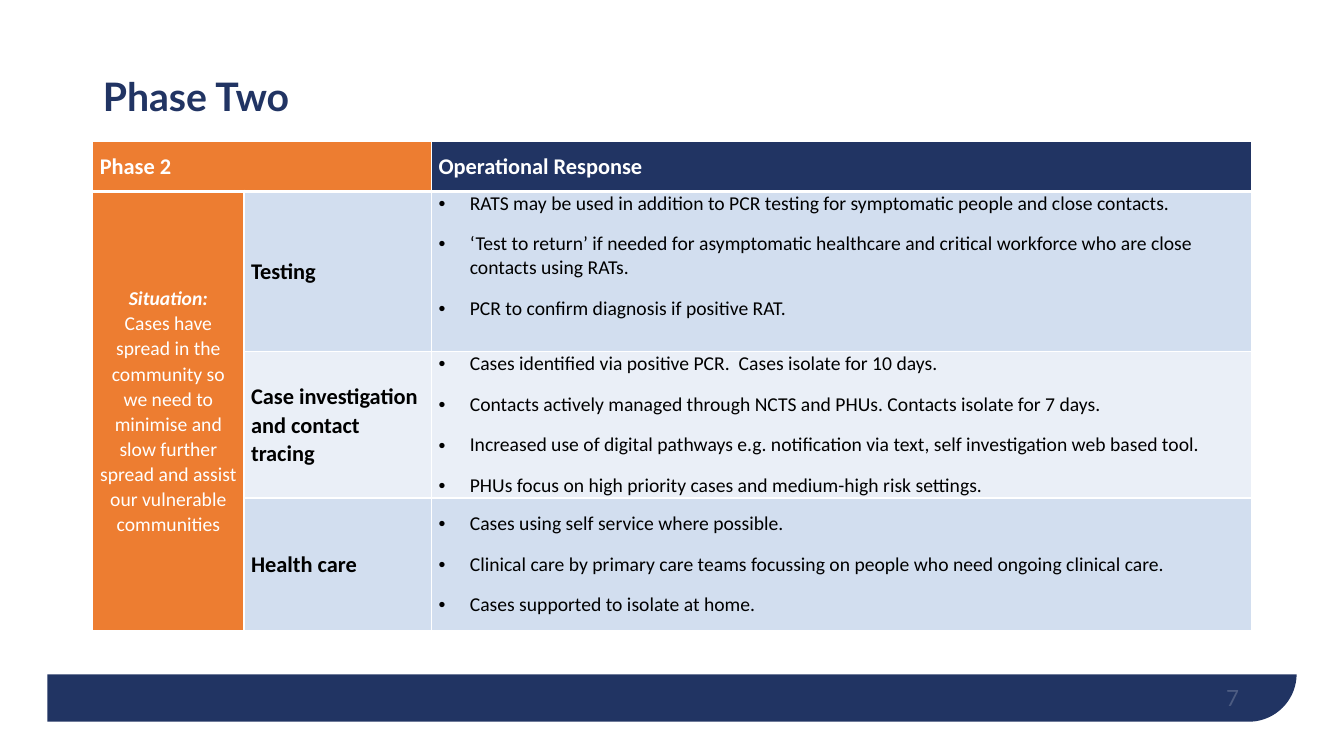
from pptx import Presentation
from pptx import util as u
from pptx.dml.color import RGBColor
from pptx.enum import shapes, text
from pptx.oxml import ns
from lxml import etree

NAVY, ORANGE, WHITE, BLACK = "213463", "ED7D31", "FFFFFF", "000000"
BANDS = ["D2DEEF", "EAEFF7"]
COLUMNS = [1.5, 1.86, 8.13]
ROWS = [0.5, 1.59, 1.45, 1.32]
MIDDLE, TOP = text.MSO_ANCHOR.MIDDLE, text.MSO_ANCHOR.TOP
SITUATION = ("Cases have spread in the community so we need to minimise and slow "
             "further spread and assist our vulnerable communities")
RESPONSES = [
    ("Testing", TOP, [
        "RATS may be used in addition to PCR testing for symptomatic people and close contacts.",
        "‘Test to return’ if needed for asymptomatic healthcare and critical workforce "
        "who are close contacts using RATs.",
        "PCR to confirm diagnosis if positive RAT."]),
    ("Case investigation and contact tracing", MIDDLE, [
        "Cases identified via positive PCR.  Cases isolate for 10 days.",
        "Contacts actively managed through NCTS and PHUs. Contacts isolate for 7 days.",
        "Increased use of digital pathways e.g. notification via text, "
        "self investigation web based tool.",
        "PHUs focus on high priority cases and medium-high risk settings."]),
    ("Health care", MIDDLE, [
        "Cases using self service where possible.",
        "Clinical care by primary care teams focussing on people who need ongoing clinical care.",
        "Cases supported to isolate at home."]),
]


def paint(target, color):
    """Give a fill or line format a solid colour."""
    target.solid()
    target.fore_color.rgb = RGBColor.from_string(color)


def add_span(para, words, size, color, bold=False, italic=False, face="Calibri"):
    span = para.add_run()
    span.text = words
    span.font.size, span.font.name = u.Pt(size), face
    span.font.bold, span.font.italic = bold, italic
    paint(span.font.fill, color)
    return span


def add_panel(page, kind, box, color):
    panel = page.shapes.add_shape(kind, *map(u.Inches, box))
    panel.shadow.inherit = False
    paint(panel.fill, color)
    panel.line.fill.background()
    return panel


def add_footer(page, box, number):
    """Navy band with one rounded corner, showing below a white page area."""
    left, top, width, height = box
    band = add_panel(page, shapes.MSO_SHAPE.ROUND_1_RECTANGLE, box, NAVY)
    band.adjustments[0] = 0.07
    band.element.spPr.find(ns.qn("a:xfrm")).set("flipV", "1")
    add_panel(page, shapes.MSO_SHAPE.RECTANGLE, (0, 0, 13.33, 6.69), WHITE)
    bottom = top + height
    label = page.shapes.add_textbox(*map(u.Inches, (left + 8.82, bottom - 0.51, 3, 0.4)))
    frame = label.text_frame
    frame.word_wrap = True
    frame.vertical_anchor = text.MSO_ANCHOR.BOTTOM
    frame.margin_left = frame.margin_right = frame.margin_top = frame.margin_bottom = 0
    para = frame.paragraphs[0]
    para.alignment = text.PP_ALIGN.RIGHT
    span = add_span(para, number, 16, WHITE, face="Lato")
    tint = span.font._element.find(".//" + ns.qn("a:srgbClr"))
    etree.SubElement(tint, ns.qn("a:alpha"), val="20000")


def add_title(page, box, words):
    title = page.shapes.title
    page.shapes._spTree.append(title.element)
    title.left, title.top, title.width, title.height = map(u.Inches, box)
    title.text_frame.vertical_anchor = MIDDLE
    para = title.text_frame.paragraphs[0]
    para.alignment, para.line_spacing = text.PP_ALIGN.LEFT, 0.9
    add_span(para, words, 28, NAVY, bold=True, face="Lato")


def style_cell(cell, color, header=False):
    cell.margin_left = cell.margin_right = u.Inches(0.07)
    cell.margin_top = cell.margin_bottom = 0
    cell.vertical_anchor = MIDDLE
    for side in "LRTB":
        points = 3 if header and side == "B" else 1
        edge = etree.SubElement(cell._tc.get_or_add_tcPr(), ns.qn("a:ln" + side),
                                w=str(u.Pt(points)))
        solid = etree.SubElement(edge, ns.qn("a:solidFill"))
        etree.SubElement(solid, ns.qn("a:srgbClr"), val=WHITE)
    paint(cell.fill, color)


def write_label(cell, words, color, after=0):
    para = cell.text_frame.paragraphs[0]
    para.line_spacing, para.space_after = 1.05, u.Pt(after)
    add_span(para, words, 16, color, bold=True)


def write_bullets(cell, items):
    frame = cell.text_frame
    for index, item in enumerate(items):
        para = frame.add_paragraph() if index else frame.paragraphs[0]
        props = para._p.get_or_add_pPr()
        props.set("marL", str(u.Inches(0.31)))
        props.set("indent", str(-u.Inches(0.31)))
        etree.SubElement(props, ns.qn("a:buFont"), typeface="Arial")
        etree.SubElement(props, ns.qn("a:buChar"), char="•")
        para.space_before = u.Pt(6 if index else 0)
        para.space_after = u.Pt(6)
        add_span(para, item, 14, BLACK)


def write_situation(cell):
    para = cell.text_frame.paragraphs[0]
    para.alignment, para.line_spacing = text.PP_ALIGN.CENTER, 1.05
    para.space_after = u.Pt(8)
    add_span(para, "Situation:", 14, WHITE, bold=True, italic=True)
    para.add_line_break()
    add_span(para, SITUATION, 14, WHITE)


def add_response_table(page, left, top):
    box = (left, top, sum(COLUMNS), sum(ROWS))
    table = page.shapes.add_table(len(ROWS), len(COLUMNS), *map(u.Inches, box)).table
    for column, width in zip(table.columns, COLUMNS):
        column.width = u.Inches(width)
    for row, height in zip(table.rows, ROWS):
        row.height = u.Inches(height)
    for r in range(len(ROWS)):
        fills = [ORANGE] + [BANDS[(r - 1) % 2]] * 2 if r else [ORANGE, ORANGE, NAVY]
        for c, color in enumerate(fills):
            style_cell(table.cell(r, c), color, header=r == 0)
    table.cell(0, 0).merge(table.cell(0, 1))
    table.cell(1, 0).merge(table.cell(3, 0))
    write_label(table.cell(0, 0), "Phase 2", WHITE)
    write_label(table.cell(0, 2), "Operational Response", WHITE)
    write_situation(table.cell(1, 0))
    for r, (label, anchor, items) in enumerate(RESPONSES, start=1):
        write_label(table.cell(r, 1), label, BLACK, after=8)
        write_bullets(table.cell(r, 2), items)
        table.cell(r, 2).vertical_anchor = anchor


def main():
    deck = Presentation()
    deck.slide_width, deck.slide_height = u.Inches(13.33), u.Inches(7.5)
    page = deck.slides.add_slide(deck.slide_layouts[5])
    paint(page.background.fill, WHITE)
    add_footer(page, (0.47, 0.37, 12.39, 6.79), "7")
    add_title(page, (0.92, 0.4, 10.43, 1.17), "Phase Two")
    add_response_table(page, 0.92, 1.4)
    deck.save("out.pptx")


if __name__ == "__main__":
    main()
